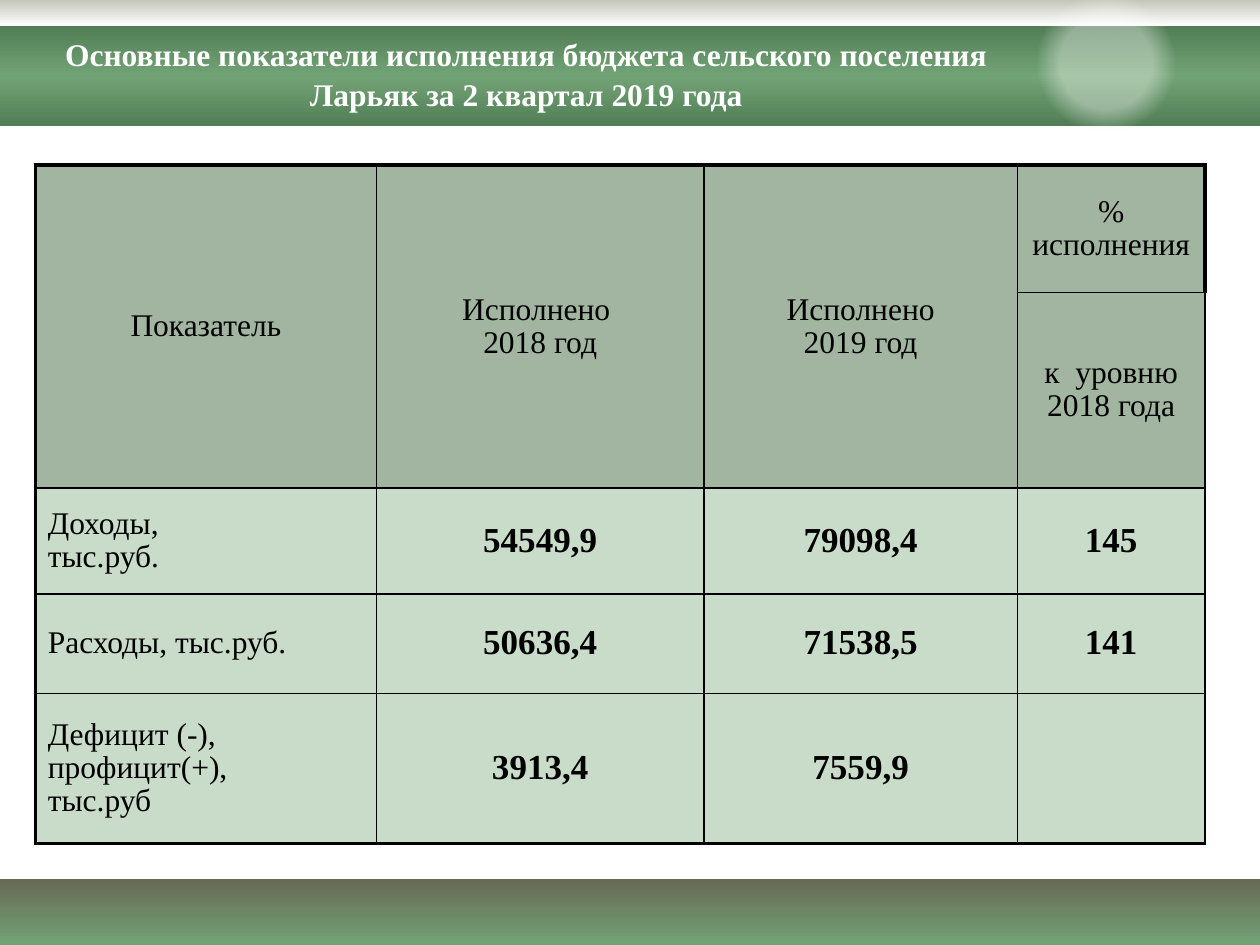
from lxml import etree
from pptx import Presentation
from pptx.dml.color import RGBColor
from pptx.enum.shapes import MSO_SHAPE as Kind
from pptx.enum.text import MSO_ANCHOR as Anchor, PP_ALIGN as Align
from pptx.oxml import parse_xml
from pptx.oxml.ns import qn
from pptx.util import Cm, Pt

FONT = "Times New Roman"
BLACK = RGBColor(0x00, 0x00, 0x00)
WHITE = RGBColor(0xFF, 0xFF, 0xFF)
OLIVE = RGBColor(0x67, 0x6A, 0x55)
SAND = RGBColor(0xC4, 0xC6, 0xB8)
GREEN = RGBColor(0x72, 0xA3, 0x76)
DARK = RGBColor(0x52, 0x7E, 0x56)
HEAD = RGBColor(0x4B, 0x73, 0x4B)
BODY = RGBColor(0x76, 0xA7, 0x76)
NS = "http://schemas.openxmlformats.org/drawingml/2006/main"
THIN, THICK = Pt(1), Pt(2.25)

TITLE = ("Основные показатели исполнения бюджета "
         "сельского поселения Ларьяк за 2 квартал 2019 года")
ROWS = [
    ["Показатель", "Исполнено \n2018 год", "Исполнено\n2019 год", "% исполнения"],
    ["", "", "", "к  уровню 2018 года"],
    ["Доходы,\nтыс.руб.", "54549,9", "79098,4", "145"],
    ["Расходы, тыс.руб.", "50636,4", "71538,5", "141"],
    ["Дефицит (-),\nпрофицит(+),\nтыс.руб", "3913,4", "7559,9", ""],
]
WIDTHS = [6.88, 6.6, 6.32, 3.78]
HEIGHTS = [2.57, 3.94, 2.13, 2.01, 3.02]
HEADS = 2

# shape, box in cm, direction, stops (percent, colour, opacity)
LINEAR = '<a:lin ang="5400000" scaled="0"/>'
RADIAL = ('<a:path path="circle"><a:fillToRect l="50000" t="50000" '
          'r="50000" b="50000"/></a:path>')
DECOR = [
    (Kind.RECTANGLE, (0, 17.73, 25.4, 1.32), LINEAR,
     [(0, OLIVE, 100), (100, GREEN, 100)]),
    (Kind.RECTANGLE, (0, 0, 25.4, 0.53), LINEAR,
     [(0, SAND, 100), (100, WHITE, 100)]),
    (Kind.RECTANGLE, (0, 0.53, 25.4, 2.01), LINEAR,
     [(0, DARK, 100), (50, GREEN, 100), (100, DARK, 100)]),
    (Kind.OVAL, (20.9, -0.28, 2.8, 3.12), RADIAL,
     [(44, WHITE, 38), (67, WHITE, 0)]),
]


def add_decor(slide, kind, box, way, stops):
    shape = slide.shapes.add_shape(kind, *map(Cm, box))
    shape.shadow.inherit = False
    shape.line.fill.background()
    marks = "".join(
        f'<a:gs pos="{pos * 1000}"><a:srgbClr val="{color}">'
        f'<a:alpha val="{alpha * 1000}"/></a:srgbClr></a:gs>'
        for pos, color, alpha in stops)
    grad = parse_xml(f'<a:gradFill xmlns:a="{NS}" rotWithShape="1">'
                     f'<a:gsLst>{marks}</a:gsLst>{way}</a:gradFill>')
    shape.element.spPr.find(qn("a:prstGeom")).addnext(grad)


def write(frame, text, size, bold, color, align, spacing):
    for i, line in enumerate(text.split("\n")):
        para = frame.add_paragraph() if i else frame.paragraphs[0]
        para.alignment = align
        para.line_spacing = spacing
        run = para.add_run()
        run.text = line
        font = run.font
        font.name, font.size, font.bold = FONT, Pt(size), bold
        font.color.rgb = color


def paint(cell, color, alpha, edges):
    """Fill a cell and draw its edges, given as left, right, top, bottom."""
    cell.fill.solid()
    cell.fill.fore_color.rgb = color
    props = cell._tc.get_or_add_tcPr()
    tint = props.find(f"{qn('a:solidFill')}/{qn('a:srgbClr')}")
    etree.SubElement(tint, qn("a:alpha")).set("val", str(alpha * 1000))
    for i, (side, width) in enumerate(zip("LRTB", edges)):
        props.insert(i, parse_xml(
            f'<a:ln{side} xmlns:a="{NS}" w="{width}"><a:solidFill>'
            f'<a:srgbClr val="{BLACK}"/></a:solidFill></a:ln{side}>'))


def add_grid(slide):
    table = slide.shapes.add_table(
        len(ROWS), len(WIDTHS), Cm(0.71), Cm(3.33),
        Cm(sum(WIDTHS)), Cm(sum(HEIGHTS))).table
    table.first_row = table.horz_banding = False
    for col, width in zip(table.columns, WIDTHS):
        col.width = Cm(width)
    for row, height in zip(table.rows, HEIGHTS):
        row.height = Cm(height)
    last_row, last_col = len(ROWS) - 1, len(WIDTHS) - 1
    for r, texts in enumerate(ROWS):
        head = r < HEADS
        for c, text in enumerate(texts):
            cell = table.cell(r, c)
            cell.vertical_anchor = Anchor.MIDDLE
            heavy = (c == 0, r == 0 and c == last_col, r == 0, r == last_row)
            paint(cell, HEAD if head else BODY, 52 if head else 39,
                  [THICK if h else THIN for h in heavy])
            value = not head and c > 0
            if text:
                write(cell.text_frame, text, 20 if value else 18, value, BLACK,
                      Align.CENTER if head or value else Align.LEFT, 0.95)
    for c in range(last_col):
        table.cell(0, c).merge(table.cell(HEADS - 1, c))


def main():
    deck = Presentation()
    deck.slide_width, deck.slide_height = Cm(25.4), Cm(19.05)
    slide = deck.slides.add_slide(deck.slide_layouts[6])
    for item in DECOR:
        add_decor(slide, *item)
    add_grid(slide)
    title = slide.shapes.add_textbox(Cm(0.71), Cm(0.53), Cm(19.8), Cm(1.8))
    title.text_frame.word_wrap = True
    write(title.text_frame, TITLE, 18, True, WHITE, Align.CENTER, 1.06)
    deck.save("out.pptx")


if __name__ == "__main__":
    main()
